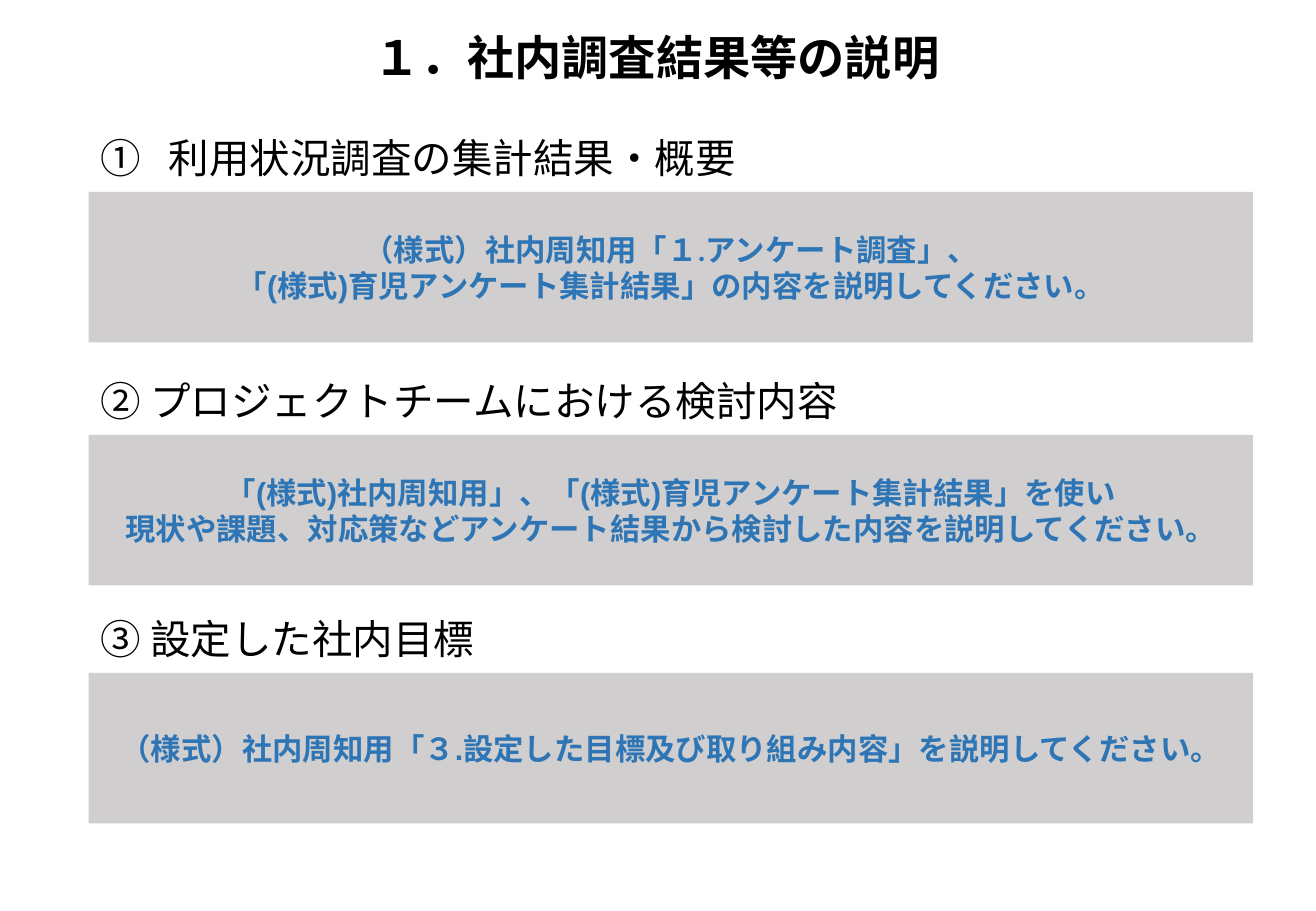
from dataclasses import dataclass

from lxml import etree
from pptx import Presentation
from pptx import util as u
from pptx.dml.color import RGBColor
from pptx.enum import shapes, text
from pptx.oxml.ns import qn


@dataclass(frozen=True)
class Theme:
    ink: str = "000000"
    blue: str = "2E75B6"
    grey: str = "D0CECE"
    main: str = "Arial"
    alt: str = "Calibri"
    title: int = 28
    head: int = 24
    body: int = 18


class Deck:
    """Draws styled parts on a slide, placed in percent of its size."""

    def __init__(self, theme, width, height):
        self.theme = theme
        self.file = Presentation()
        self.file.slide_width = u.Inches(width)
        self.file.slide_height = u.Inches(height)
        self.slide = self.file.slides.add_slide(self.file.slide_layouts[5])

    def place(self, x, y, w, h):
        wide, tall = self.file.slide_width, self.file.slide_height
        return [int(part * size / 100) for part, size in zip((x, y, w, h), (wide, tall) * 2)]

    def style(self, para, size, color, bold=False):
        font = para.font
        font.name, font.size, font.bold = self.theme.main, u.Pt(size), bold
        font.color.rgb = RGBColor.from_string(color)

    def title(self, words, *area):
        shape = self.slide.shapes.title
        shape.left, shape.top, shape.width, shape.height = self.place(*area)
        frame = shape.text_frame
        frame.text = words
        frame.word_wrap = False
        frame.auto_size = text.MSO_AUTO_SIZE.SHAPE_TO_FIT_TEXT
        frame.vertical_anchor = text.MSO_ANCHOR.MIDDLE
        para = frame.paragraphs[0]
        para.alignment = text.PP_ALIGN.LEFT
        para.line_spacing = 0.9
        self.style(para, self.theme.title, self.theme.ink, True)

    def heading(self, words, count, *area):
        frame = self.slide.shapes.add_textbox(*self.place(*area)).text_frame
        frame.text = words
        frame.word_wrap = False
        frame.auto_size = text.MSO_AUTO_SIZE.SHAPE_TO_FIT_TEXT
        para = frame.paragraphs[0]
        para.line_spacing = 0.9
        para.space_before = u.Pt(10)
        self.style(para, self.theme.head, self.theme.ink)
        if count:
            self.number(para)

    def number(self, para):
        props = para._p.get_or_add_pPr()
        indent = u.Inches(0.56)
        props.set("marL", str(indent))
        props.set("indent", str(-indent))
        mark = etree.Element(qn("a:buAutoNum"), type="circleNumDbPlain")
        props.find(qn("a:defRPr")).addprevious(mark)

    def panel(self, lines, *area):
        shape = self.slide.shapes.add_shape(shapes.MSO_SHAPE.RECTANGLE, *self.place(*area))
        shape.shadow.inherit = False
        shape.fill.solid()
        shape.fill.fore_color.rgb = RGBColor.from_string(self.theme.grey)
        shape.line.fill.background()
        frame = shape.text_frame
        frame.word_wrap = True
        frame.vertical_anchor = text.MSO_ANCHOR.MIDDLE
        for row, line in enumerate(lines):
            para = frame.add_paragraph() if row else frame.paragraphs[0]
            para.alignment = text.PP_ALIGN.CENTER
            self.style(para, self.theme.body, self.theme.blue, True)
            for words, font in line:
                run = para.add_run()
                run.text = words
                if font != self.theme.main:
                    run.font.name = font


def main():
    theme = Theme()
    deck = Deck(theme, 10.83, 7.5)
    main_font, alt = theme.main, theme.alt
    parts = [
        ("利用状況調査の集計結果・概要", True, 50.6, 21.07, [
            [("（様式）社内周知用「１.アンケート調査」", alt), ("、", main_font)],
            [("「(様式)育児アンケート集計結果」", main_font), ("の内容を説明してください。", alt)],
        ]),
        ("② プロジェクトチームにおける検討内容", False, 58.73, 47.73, [
            [("「(様式)社内周知用」、「(様式)育児アンケート集計結果」を使い", main_font)],
            [("現状や課題、対応策などアンケート結果から検討した内容を説明してください。", main_font)],
        ]),
        ("③ 設定した社内目標", False, 30.75, 73.87, [
            [("（様式）社内周知用「３.設定した目標及び取り組み内容」を説明してください。", main_font)],
        ]),
    ]
    left, gap = 6.74, 6.5
    deck.title("１．社内調査結果等の説明", 27.42, 3.07, 45.34, 7.07)
    for words, count, width, top, lines in parts:
        deck.heading(words, count, left, top - gap, width, 6.2)
        deck.panel(lines, left, top, 88.46, 16.53)
    deck.file.save("out.pptx")


if __name__ == "__main__":
    main()
